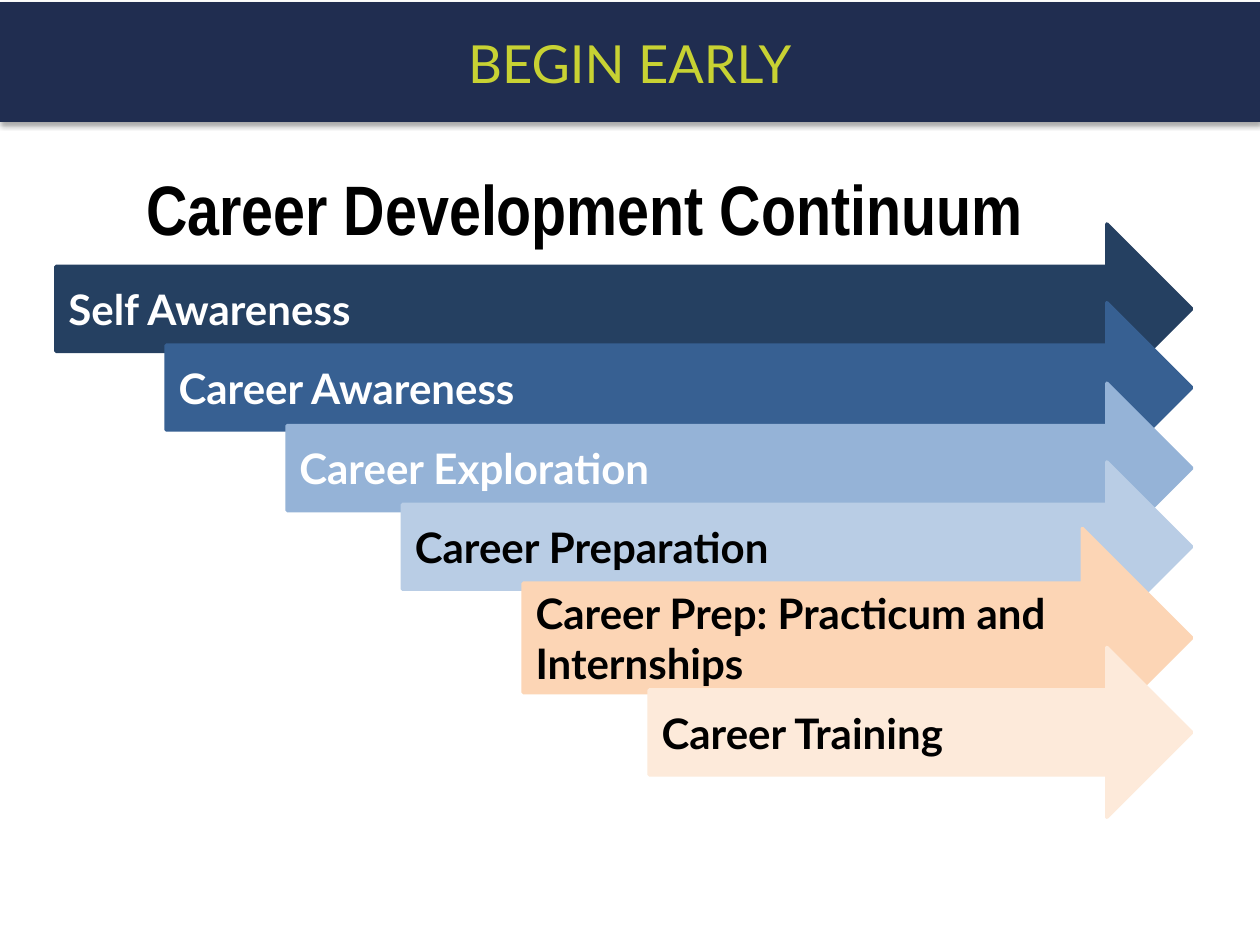
import pptx
import pptx.dml.color
import pptx.enum.shapes
import pptx.enum.text
import pptx.oxml
import pptx.oxml.ns
import pptx.util

Pt = pptx.util.Pt
RGB = pptx.dml.color.RGBColor
SHAPE = pptx.enum.shapes.MSO_SHAPE
ALIGN = pptx.enum.text.PP_ALIGN
MIDDLE = pptx.enum.text.MSO_ANCHOR.MIDDLE

NAVY = RGB(0x20, 0x2D, 0x50)
LIME = RGB(0xC8, 0xD2, 0x33)
BLACK = RGB(0x00, 0x00, 0x00)
WHITE = RGB(0xFF, 0xFF, 0xFF)
DEEP = RGB(0x25, 0x40, 0x61)
BLUE = RGB(0x37, 0x60, 0x92)
SKY = RGB(0x95, 0xB3, 0xD7)
PALE = RGB(0xB9, 0xCD, 0xE5)
PEACH = RGB(0xFC, 0xD5, 0xB5)
CREAM = RGB(0xFD, 0xEA, 0xDA)

BANNER = {"name": "Lato", "size": Pt(30), "bold": False}
TITLE = {"name": "Arial Narrow", "size": Pt(40), "bold": True}
LABEL = {"name": "Lato", "size": Pt(24), "bold": True}

STAGES = [
    ("Self Awareness", 0, 0, 97, DEEP, WHITE),
    ("Career Awareness", 63, 45, 97, BLUE, WHITE),
    ("Career Exploration", 132, 91, 97, SKY, WHITE),
    ("Career Preparation", 198, 136, 97, PALE, BLACK),
    ("Career Prep: Practicum and Internships", 267, 174, 125, PEACH, BLACK),
    ("Career Training", 339, 242, 97, CREAM, BLACK),
]


def write(shape, text, form, color, align):
    """Put one formatted paragraph in a shape, centred in height."""
    frame = shape.text_frame
    frame.word_wrap = True
    frame.vertical_anchor = MIDDLE
    para = frame.paragraphs[0]
    para.alignment = align
    run = para.add_run()
    run.text = text
    for key, value in form.items():
        setattr(run.font, key, value)
    run.font.color.rgb = color


def block(slide, kind, box, color, weight):
    """Add a preset shape with one colour for fill and line."""
    shape = slide.shapes.add_shape(kind, *map(Pt, box))
    shape.shadow.inherit = False
    shape.fill.solid()
    shape.fill.fore_color.rgb = color
    shape.line.color.rgb = color
    shape.line.width = Pt(weight)
    return shape


def shade(shape, blur, dist):
    """Give a shape a soft black shadow that falls downward."""
    effect = shape.fill._xPr.find(pptx.oxml.ns.qn("a:effectLst"))
    effect.append(pptx.oxml.parse_xml(
        f'<a:outerShdw {pptx.oxml.ns.nsdecls("a")} blurRad="{Pt(blur)}" '
        f'dist="{Pt(dist)}" dir="5400000" rotWithShape="0">'
        '<a:srgbClr val="000000"><a:alpha val="35000"/></a:srgbClr>'
        '</a:outerShdw>'))


def title(slide, box):
    """Place the heading in its box."""
    shape = slide.shapes.add_textbox(*map(Pt, box))
    write(shape, "Career Development Continuum", TITLE, BLACK, ALIGN.CENTER)


def steps(slide, box):
    """Stack the stage arrows so that all tips meet the right edge."""
    left, top, width, _ = box
    for text, dx, dy, height, fill, color in STAGES:
        area = (left + dx, top + dy, width - dx, height)
        arrow = block(slide, SHAPE.RIGHT_ARROW, area, fill, 2)
        write(arrow, text, LABEL, color, ALIGN.LEFT)


def banner(slide, box):
    """Draw the shaded band with its caption."""
    band = block(slide, SHAPE.RECTANGLE, box, NAVY, 0.75)
    shade(band, 3.1, 1.8)
    write(band, "BEGIN EARLY", BANNER, LIME, ALIGN.CENTER)


def main():
    """Build the slide and save it."""
    deck = pptx.Presentation()
    deck.slide_width, deck.slide_height = Pt(720), Pt(540)
    slide = deck.slides.add_slide(deck.slide_layouts[6])
    title(slide, (32, 79, 604, 79))
    steps(slide, (32, 128, 649, 339))
    banner(slide, (0, 1.5, 720, 68))
    deck.save("out.pptx")


if __name__ == "__main__":
    main()
